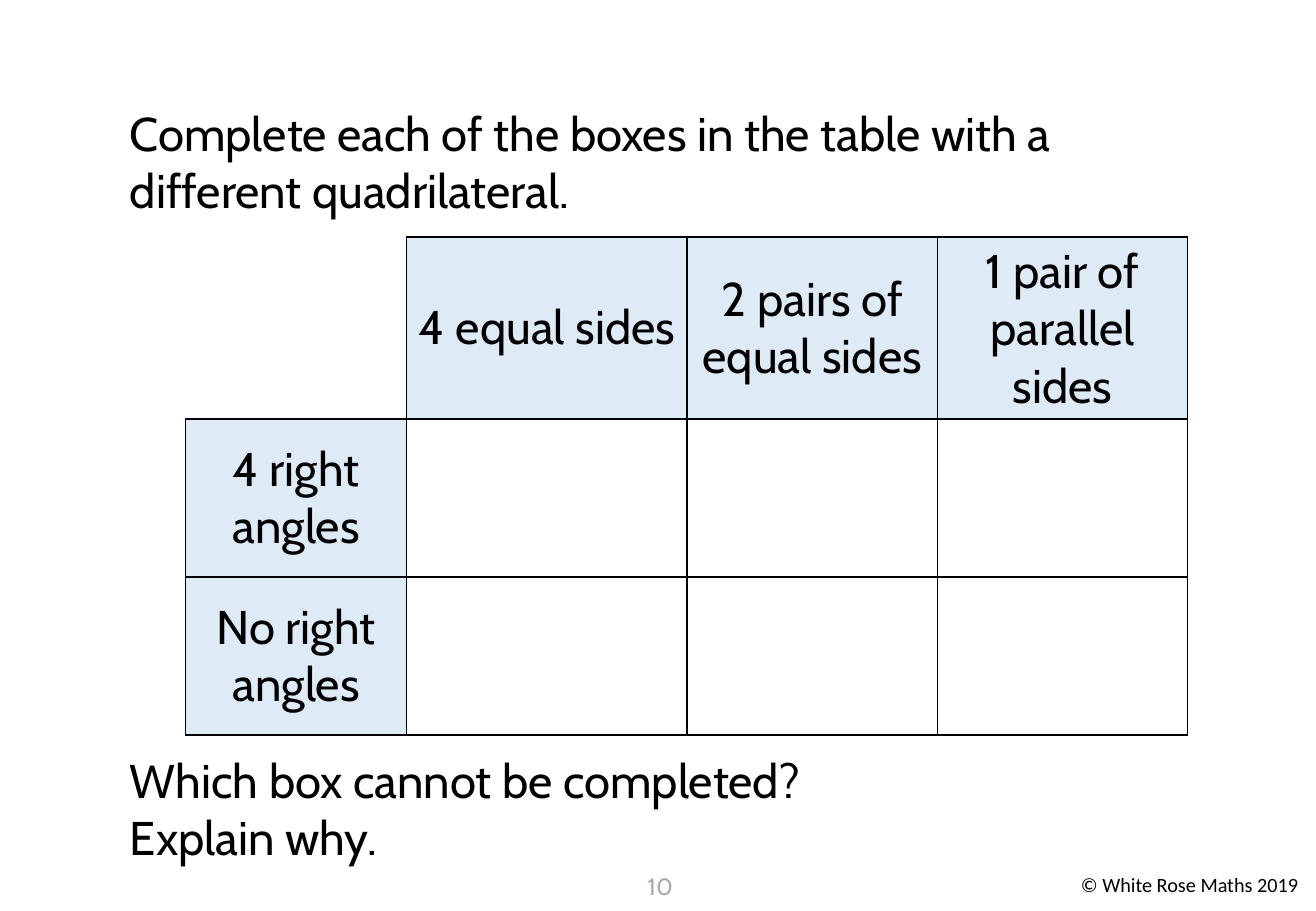
from dataclasses import dataclass

from lxml.etree import SubElement
from pptx import Presentation
from pptx.dml.color import RGBColor as RGB
from pptx.enum.text import MSO_ANCHOR as Anchor, PP_ALIGN as Align
from pptx.oxml.ns import qn
from pptx.util import Pt


@dataclass(frozen=True)
class Theme:
    font: str = "Cabin"
    credit_font: str = "Calibri"
    body: int = 28
    number: int = 14
    credit: int = 12
    ink: str = "000000"
    muted: str = "AFABAB"
    head: str = "DEEBF7"
    paper: str = "FFFFFF"
    line: int = 1


THEME = Theme()
COLS = (131, 166.3, 148.3, 148.3)
ROWS = (108, 93.6, 93.6)
GRID = (
    ("", "4 equal sides", "2 pairs of equal sides", "1 pair of parallel sides"),
    ("4 right angles", "", "", ""),
    ("No right angles", "", "", ""),
)


def style(frame, size, color=THEME.ink, font=THEME.font, align=Align.LEFT):
    for para in frame.paragraphs:
        para.alignment = align
        for run in para.runs:
            run.font.name = font
            run.font.size = Pt(size)
            run.font.color.rgb = RGB.from_string(color)


def add_text(slide, box, text, size, **look):
    frame = slide.shapes.add_textbox(*map(Pt, box)).text_frame
    frame.word_wrap = True
    frame.text = text
    style(frame, size, **look)


def set_edges(cell, sides):
    """Draw the named sides (L, R, T, B) and clear the others."""
    props = cell._tc.get_or_add_tcPr()
    for side in "LRTB":
        edge = SubElement(props, qn(f"a:ln{side}"), w=str(Pt(THEME.line)))
        if side in sides:
            fill = SubElement(edge, qn("a:solidFill"))
            SubElement(fill, qn("a:srgbClr"), val=THEME.ink)
        else:
            SubElement(edge, qn("a:noFill"))


def fill_cell(cell, text, corner):
    set_edges(cell, "RB" if corner else "LRTB")
    if corner:
        cell.fill.background()
        return
    cell.fill.solid()
    cell.fill.fore_color.rgb = RGB.from_string(THEME.head if text else THEME.paper)
    if text:
        cell.text_frame.text = text
        cell.vertical_anchor = Anchor.MIDDLE
        style(cell.text_frame, THEME.body, align=Align.CENTER)


def add_grid(slide, left, top):
    size = map(Pt, (left, top, sum(COLS), sum(ROWS)))
    table = slide.shapes.add_table(len(ROWS), len(COLS), *size).table
    table.first_row = table.horz_banding = False
    for col, width in zip(table.columns, COLS):
        col.width = Pt(width)
    for row, height in zip(table.rows, ROWS):
        row.height = Pt(height)
    for r, texts in enumerate(GRID):
        for c, text in enumerate(texts):
            fill_cell(table.cell(r, c), text, corner=r == c == 0)


def main():
    deck = Presentation()
    deck.slide_width, deck.slide_height = Pt(780), Pt(540)
    slide = deck.slides.add_slide(deck.slide_layouts[6])

    add_text(slide, (70, 58.3, 634, 76),
             "Complete each of the boxes in the table with a different quadrilateral.",
             THEME.body)
    add_grid(slide, 110, 140.4)
    add_text(slide, (70, 441.7, 634, 76),
             "Which box cannot be completed?\nExplain why.", THEME.body)
    add_text(slide, (373, 513.4, 36.7, 26), "10", THEME.number,
             color=THEME.muted, align=Align.CENTER)
    add_text(slide, (633.6, 513.4, 146.4, 21.6), "© White Rose Maths 2019",
             THEME.credit, font=THEME.credit_font)
    deck.save("out.pptx")


if __name__ == "__main__":
    main()
